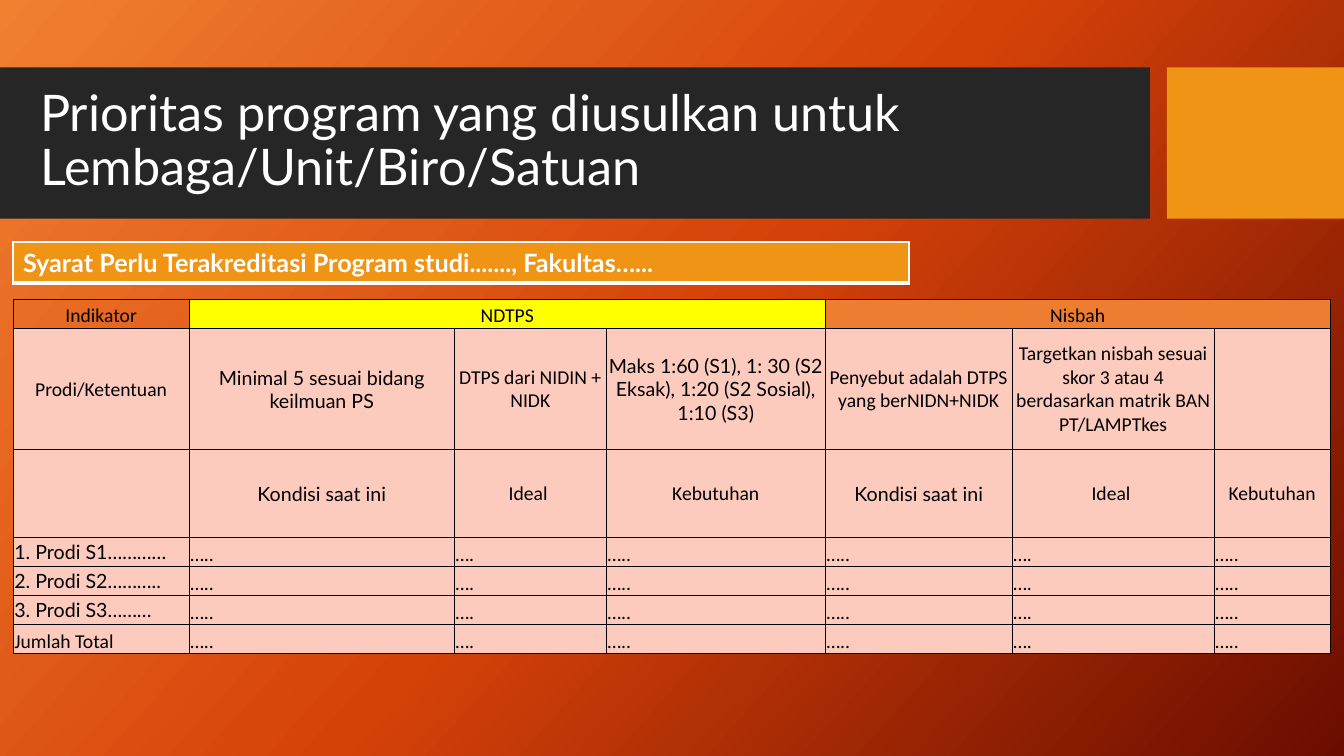
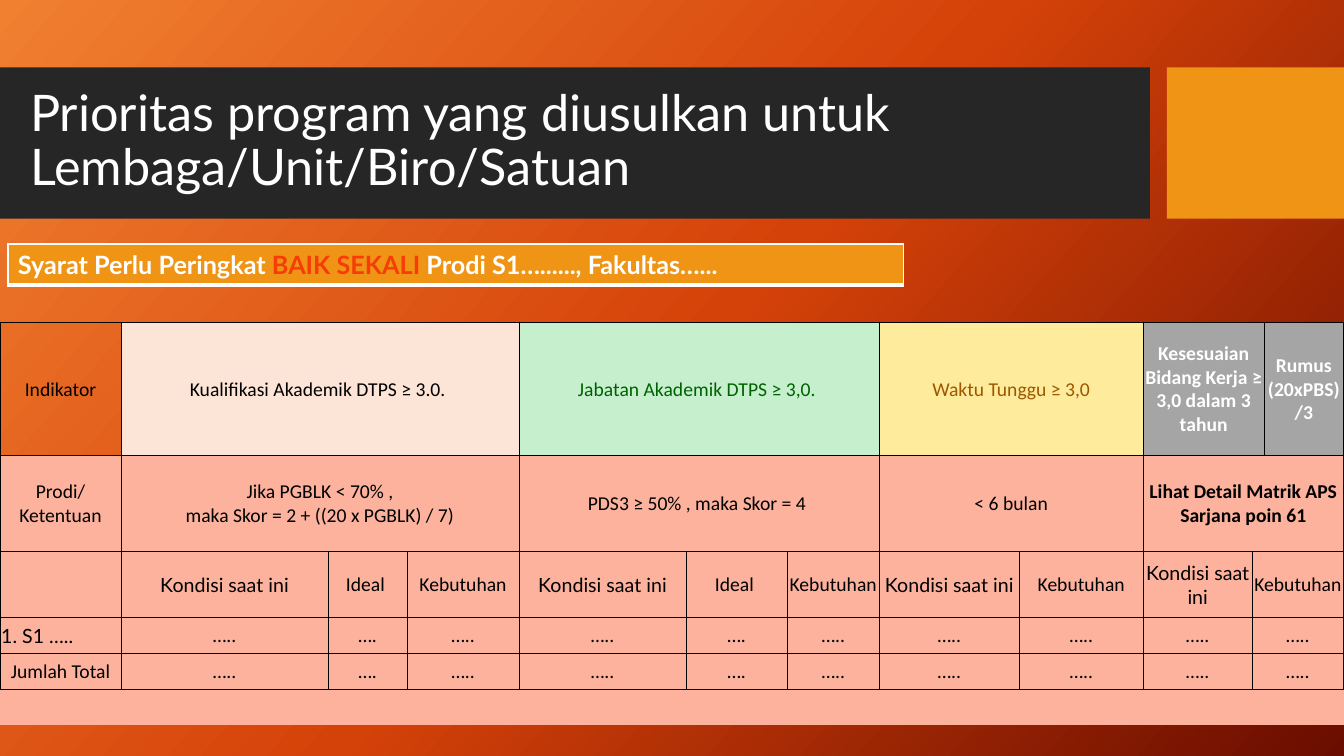
"""Build two slides of programme priority tables."""
from copy import deepcopy
from dataclasses import dataclass

from lxml import etree
from pptx import Presentation
from pptx import util as u
from pptx.dml import color
from pptx.enum import shapes, text
from pptx.oxml import ns

MID, LOW = text.MSO_ANCHOR.MIDDLE, text.MSO_ANCHOR.BOTTOM
LEFT, MIDST = text.PP_ALIGN.LEFT, text.PP_ALIGN.CENTER


@dataclass(frozen=True)
class Theme:
    back: tuple = ((0, "F18031"), (0.5, "D54209"), (1, "6A0D00"))
    turn: int = 318
    dark: str = "262626"
    gold: str = "F09415"
    white: str = "FFFFFF"
    black: str = "000000"
    red: str = "F73C09"
    yellow: str = "FFFF00"
    orange: str = "ED7D31"
    blush: str = "FDCBBE"
    coral: str = "FCB29D"
    peach: str = "FCE4D6"
    mint: str = "C6EFCE"
    green: str = "006100"
    cream: str = "FFEB9C"
    brown: str = "9C5700"
    gray: str = "A5A5A5"
    sans: str = "Lato"
    plain: str = "Calibri"
    large: int = 36
    mean: int = 18
    small: int = 14
    bare: str = "{2D5ABB26-0587-4C30-8999-92F81FD0307C}"


T = Theme()
TITLE = "Prioritas program yang diusulkan untuk Lembaga/Unit/Biro/Satuan"
SANS = {"name": T.sans}
START = {"name": T.sans, "align": LEFT, "anchor": MID}
HAIR = {side: (T.black, 0.5) for side in "LRTB"}
FRAME = {**{side: (T.white, 1) for side in "LRT"}, "B": (T.white, 3)}
BODY = {"name": T.plain, "size": T.small, "ink": T.black, "bold": False,
        "align": MIDST, "anchor": MID, "pad": (0.03, 0.03, 0.03, 0), "edge": HAIR}
BAND = {"name": T.sans, "size": T.mean, "ink": T.white, "bold": True,
        "align": LEFT, "anchor": text.MSO_ANCHOR.TOP,
        "pad": (0.25, 0.13, 0.25, 0.13), "edge": FRAME, "fill": T.gold}


class Deck:
    def __init__(self):
        self.show = Presentation()
        self.show.slide_width, self.show.slide_height = u.Cm(33.87), u.Cm(19.05)
        self.page = None

    def add(self, left):
        self.page = self.show.slides.add_slide(self.show.slide_layouts[6])
        fill = self.page.background.fill
        fill.gradient()
        fill.gradient_angle = T.turn
        stops = self.page.element.find(".//" + ns.qn("a:gsLst"))
        stops.append(deepcopy(stops[0]))
        for stop, (at, tone) in zip(fill.gradient_stops, T.back):
            stop.position = at
            stop.color.rgb = color.RGBColor.from_string(tone)
        self.block(0, 28.98, T.dark)
        self.block(29.41, 4.46, T.gold)
        self.title(left)

    def block(self, left, width, tone):
        box = self.page.shapes.add_shape(
            shapes.MSO_SHAPE.RECTANGLE, *map(u.Cm, (left, 1.7, width, 3.81)))
        box.shadow.inherit = False
        box.fill.solid()
        box.fill.fore_color.rgb = color.RGBColor.from_string(tone)
        box.line.fill.background()

    def title(self, left):
        box = self.page.shapes.add_textbox(*map(u.Cm, (left, 2.08, 26.7, 3)))
        frame = box.text_frame
        frame.word_wrap = True
        frame.vertical_anchor = MID
        self.label(frame, [(TITLE, {})], {**BAND, "size": T.large, "bold": False})
        frame.paragraphs[0].line_spacing = 0.9

    def label(self, frame, parts, look):
        para = frame.paragraphs[0]
        para.alignment = look["align"]
        for words, extra in parts:
            form = {**look, **extra}
            style = {"name": form["name"], "size": u.Pt(form["size"]),
                     "bold": form["bold"]}
            for row, line in enumerate(words.split("\n")):
                if row:
                    para.add_line_break()
                run = para.add_run()
                run.text = line
                for key, value in style.items():
                    setattr(run.font, key, value)
                run.font.color.rgb = color.RGBColor.from_string(form["ink"])

    def edge(self, cell, lines):
        props = cell._tc.get_or_add_tcPr()
        for side, (tone, width) in lines.items():
            line = etree.SubElement(props, ns.qn("a:ln" + side), w=str(u.Pt(width)))
            fill = etree.SubElement(line, ns.qn("a:solidFill"))
            etree.SubElement(fill, ns.qn("a:srgbClr"), val=tone)

    def cell(self, cell, look):
        self.edge(cell, look["edge"])
        names = ("margin_left", "margin_top", "margin_right", "margin_bottom")
        form = dict(zip(names, map(u.Cm, look["pad"])))
        form["vertical_anchor"] = look["anchor"]
        for key, value in form.items():
            setattr(cell, key, value)
        if look["fill"]:
            cell.fill.solid()
            cell.fill.fore_color.rgb = color.RGBColor.from_string(look["fill"])
        else:
            cell.fill.background()

    def table(self, left, top, cols, rows, data, base):
        frame = self.page.shapes.add_table(
            len(rows), len(cols), *map(u.Cm, (left, top, sum(cols), sum(rows))))
        grid = frame.table
        grid.first_row = grid.horz_banding = False
        frame._element.find(".//" + ns.qn("a:tableStyleId")).text = T.bare
        for col, width in zip(grid.columns, cols):
            col.width = u.Cm(width)
        for row, height in zip(grid.rows, rows):
            row.height = u.Cm(height)
        for y, items in enumerate(data):
            x = 0
            for item in items:
                words, span, extra = (item, 1, {}) if isinstance(item, str) else item
                look = {**base, **extra}
                for step in range(span):
                    self.cell(grid.cell(y, x + step), look)
                first = grid.cell(y, x)
                if span > 1:
                    first.merge(grid.cell(y, x + span - 1))
                parts = [(words, {})] if isinstance(words, str) else words
                if words:
                    self.label(first.text_frame, parts, look)
                x += span

    def band(self, left, top, parts):
        self.table(left, top, [22.58], [1.04], [[(parts, 1, {})]], BAND)


def need(deck):
    deck.add(0.76)
    low = {"anchor": LOW}
    now = ("Kondisi saat ini", 1, SANS)
    dots = [(mark, 1, {"align": LEFT, **low}) for mark in ("…..", "….", "…..") * 2]
    names = ("1. Prodi S1…………", "2. Prodi S2………..", "3. Prodi S3………")
    data = [
        [("Indikator", 1, {"fill": None, **low}),
         ("NDTPS", 3, {"fill": T.yellow, **low}),
         ("Nisbah", 3, {"fill": T.orange, **low})],
        ["Prodi/Ketentuan",
         ("Minimal 5 sesuai bidang keilmuan PS", 1, SANS),
         "DTPS dari NIDIN + NIDK",
         ("Maks 1:60 (S1), 1: 30 (S2 Eksak), 1:20 (S2 Sosial), 1:10 (S3)", 1, SANS),
         "Penyebut adalah DTPS yang berNIDN+NIDK",
         "Targetkan nisbah sesuai skor 3 atau 4 berdasarkan matrik BAN PT/LAMPTkes",
         ""],
        [""] + [now, "Ideal ", "Kebutuhan"] * 2,
        *([(name, 1, START)] + dots for name in names),
        [("Jumlah Total", 1, {"align": LEFT, **low})] + dots,
    ]
    cols = [4.44, 6.68, 3.83, 5.52, 4.71, 5.09, 2.92]
    rows = [0.73, 3.05, 2.22] + [0.73] * 4
    deck.table(0.33, 7.54, cols, rows, data, {**BODY, "fill": T.blush})
    deck.band(0.33, 6.1, "Syarat Perlu Terakreditasi Program studi......., Fakultas…...")


def rank(deck):
    deck.add(0.51)
    gray = {"fill": T.gray, "ink": T.white, "bold": True}
    now = ("Kondisi saat ini", 1, SANS)
    trio = [now, "Ideal ", "Kebutuhan"]
    dots = ["…..", "….", "….."] * 2 + ["….."] * 3 + [("…..", 2, {})]
    data = [
        [("Indikator", 1, {"fill": None}),
         ("Kualifikasi Akademik DTPS ≥ 3.0. ", 3, {"fill": T.peach}),
         ("Jabatan Akademik DTPS ≥ 3,0. ", 3, {"fill": T.mint, "ink": T.green}),
         ("Waktu Tunggu ≥ 3,0", 2, {"fill": T.cream, "ink": T.brown}),
         ("Kesesuaian Bidang Kerja ≥ 3,0 dalam 3 tahun", 2, gray),
         ("Rumus (20xPBS)/3", 1, gray)],
        ["Prodi/Ketentuan",
         ("Jika PGBLK < 70% ,\nmaka Skor = 2 + ((20 x PGBLK) / 7)", 3, {}),
         ("PDS3 ≥ 50% , maka Skor = 4 ", 3, {}),
         ("< 6 bulan", 2, {}),
         ("Lihat Detail Matrik APS Sarjana poin 61", 3, {"bold": True})],
        [""] + trio * 2 + [now, "Kebutuhan", now, ("Kebutuhan", 2, {})],
        [("1. S1 …..", 1, START)] + dots,
        ["Jumlah Total"] + dots,
        [("", span, {"edge": {"T": HAIR["T"]}}) for span in [1] * 10 + [2]],
    ]
    cols = [3.05, 5.22, 1.99, 2.82, 4.21, 2.55, 2.32, 3.53, 3.12, 2.75, 0.3, 2]
    rows = [3.37, 2.4, 1.68] + [0.9] * 3
    deck.table(0, 8.11, cols, rows, data, {**BODY, "fill": T.coral})
    deck.band(0.2, 6.15, [("Syarat Perlu Peringkat ", {}),
                          ("BAIK SEKALI ", {"ink": T.red}),
                          ("Prodi S1…......, Fakultas…...", {})])


def main():
    deck = Deck()
    need(deck)
    rank(deck)
    deck.show.save("out.pptx")


if __name__ == "__main__":
    main()
